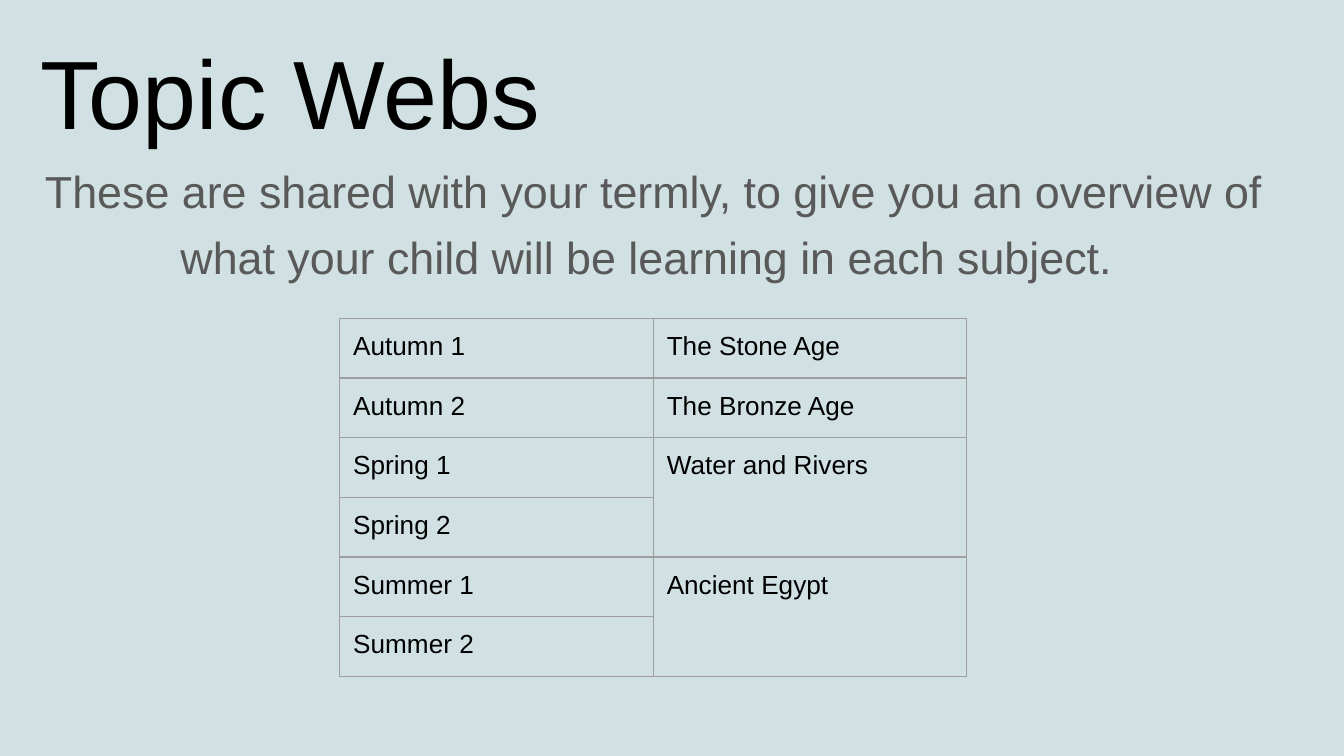
import dataclasses

import lxml.etree
import pptx
import pptx.dml.color
import pptx.enum.text
import pptx.oxml.ns
import pptx.util

Pt = pptx.util.Pt
RGB = pptx.dml.color.RGBColor.from_string
qn = pptx.oxml.ns.qn
PP_ALIGN = pptx.enum.text.PP_ALIGN
ANCHOR = pptx.enum.text.MSO_ANCHOR


@dataclasses.dataclass(frozen=True)
class Theme:
    font: str = "Arial"
    background: str = "D0E0E3"
    ink: str = "000000"
    muted: str = "595959"
    border: str = "9E9E9E"
    title_size: float = 52
    subtitle_size: float = 24
    subtitle_end_size: float = 28
    table_size: float = 14
    border_width: float = 0.75
    inset: float = 7.2


class SlideBuilder:
    def __init__(self, slide, theme):
        self.s = slide
        self.theme = theme

    def background(self):
        fill = self.s.background.fill
        fill.solid()
        fill.fore_color.rgb = RGB(self.theme.background)

    def set_font(self, p, size, color):
        p.font.name = self.theme.font
        p.font.size = Pt(size)
        p.font.color.rgb = RGB(color)

    def set_insets(self, item):
        item.margin_left = item.margin_right = Pt(self.theme.inset)
        item.margin_top = item.margin_bottom = Pt(self.theme.inset)

    def set_frame(self, tf, anchor):
        self.set_insets(tf)
        tf.word_wrap = True
        tf.auto_size = pptx.enum.text.MSO_AUTO_SIZE.NONE
        tf.vertical_anchor = anchor

    def title(self, text, left, top, width, height):
        sp = self.s.shapes.title
        sp.left, sp.top, sp.width, sp.height = map(Pt, (left, top, width, height))
        tf = sp.text_frame
        self.set_frame(tf, ANCHOR.BOTTOM)
        tf.text = text
        p = tf.paragraphs[0]
        p.alignment = PP_ALIGN.LEFT
        self.set_font(p, self.theme.title_size, self.theme.ink)

    def subtitle(self, text, left, top, width, height):
        sp = self.s.shapes.add_textbox(*map(Pt, (left, top, width, height)))
        tf = sp.text_frame
        self.set_frame(tf, ANCHOR.TOP)
        p = tf.paragraphs[0]
        p.alignment = PP_ALIGN.CENTER
        p.line_spacing = 1.08
        self.set_font(p, self.theme.subtitle_size, self.theme.muted)
        p.add_run().text = text
        # The larger closing space sets the height of the last line
        r = p.add_run()
        r.text = " "
        r.font.size = Pt(self.theme.subtitle_end_size)

    def cell_borders(self, cell):
        tc_pr = cell._tc.get_or_add_tcPr()
        for side in ("a:lnL", "a:lnR", "a:lnT", "a:lnB"):
            ln = lxml.etree.SubElement(
                tc_pr, qn(side), w=str(Pt(self.theme.border_width)))
            fill = lxml.etree.SubElement(ln, qn("a:solidFill"))
            lxml.etree.SubElement(fill, qn("a:srgbClr"), val=self.theme.border)

    def table(self, rows, left, top, col_width, row_height):
        n_rows, n_cols = len(rows), len(rows[0])
        table = self.s.shapes.add_table(
            n_rows, n_cols, Pt(left), Pt(top),
            Pt(n_cols * col_width), Pt(n_rows * row_height)).table
        table.first_row = table.horz_banding = False
        for i, row in enumerate(rows):
            for j, text in enumerate(row):
                cell = table.cell(i, j)
                self.set_insets(cell)
                self.cell_borders(cell)
                cell.fill.background()
                if text is None:
                    # A None entry continues the cell above
                    table.cell(i - 1, j).merge(cell)
                    continue
                cell.text = text
                self.set_font(cell.text_frame.paragraphs[0],
                              self.theme.table_size, self.theme.ink)


TOPICS = [
    ("Autumn 1", "The Stone Age"),
    ("Autumn 2", "The Bronze Age"),
    ("Spring 1", "Water and Rivers"),
    ("Spring 2", None),
    ("Summer 1", "Ancient Egypt"),
    ("Summer 2", None),
]


def main():
    prs = pptx.Presentation()
    prs.slide_width, prs.slide_height = Pt(720), Pt(405)
    title_only = prs.slide_layouts[5]
    builder = SlideBuilder(prs.slides.add_slide(title_only), Theme())
    builder.background()

    # Heading
    left, width = 14.5, 671
    builder.title("Topic Webs", left, 14.5, width, 72.5)
    builder.subtitle(
        "These are shared with your termly, to give you an overview of "
        "what your child will be learning in each subject.",
        left, 78, width, 62.5)

    # Topic for each half term
    builder.table(TOPICS, left=182, top=170.5, col_width=168, row_height=32)

    prs.save("out.pptx")


if __name__ == "__main__":
    main()
